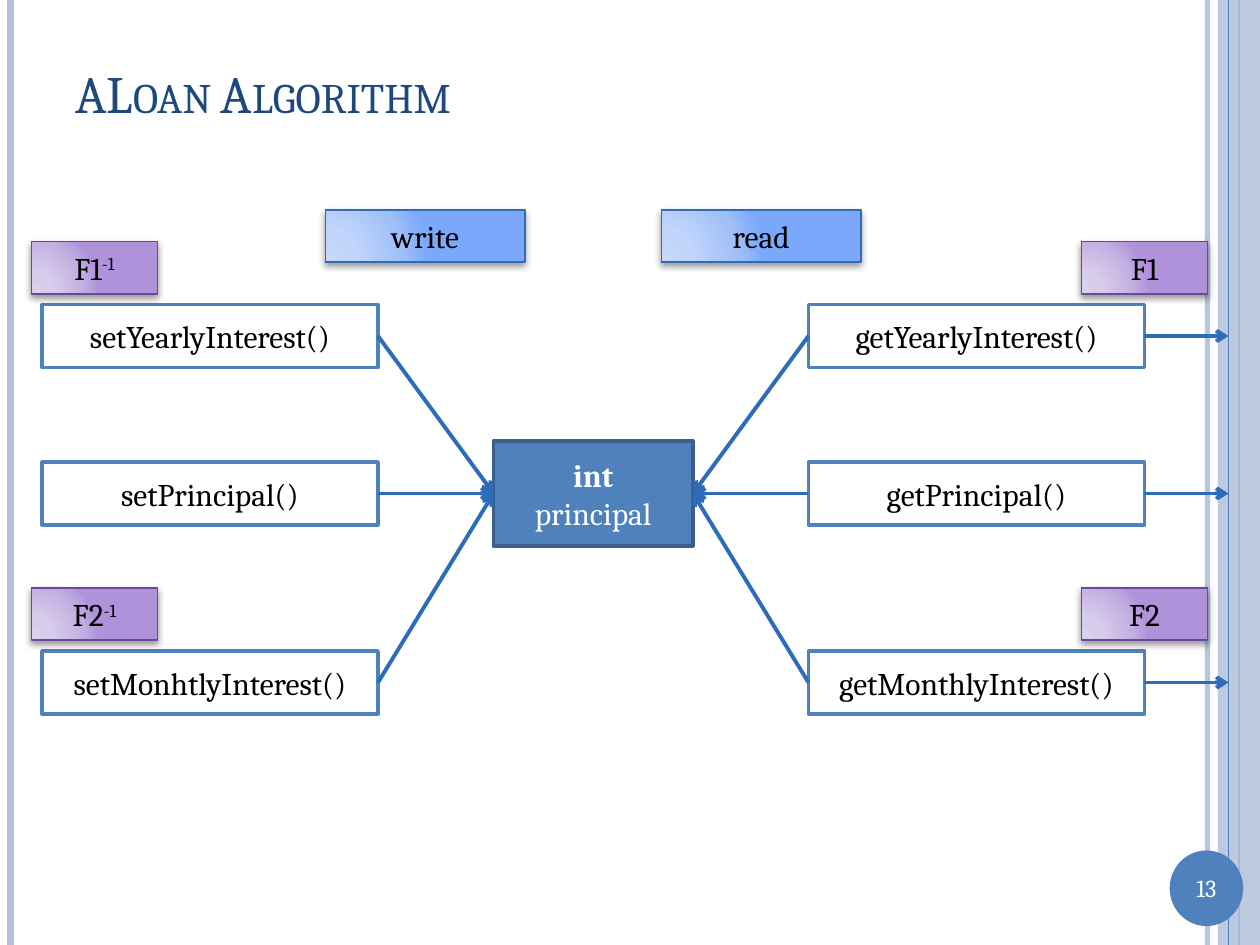
from lxml import etree
from pptx import Presentation
from pptx.dml.color import RGBColor
from pptx.enum.shapes import MSO_CONNECTOR, MSO_SHAPE
from pptx.enum.text import MSO_ANCHOR, PP_ALIGN
from pptx.oxml import parse_xml
from pptx.oxml.ns import qn
from pptx.util import Inches, Pt

RECTANGLE, OVAL = MSO_SHAPE.RECTANGLE, MSO_SHAPE.OVAL
STRAIGHT = MSO_CONNECTOR.STRAIGHT
LEFT, CENTER = PP_ALIGN.LEFT, PP_ALIGN.CENTER
MIDDLE, TOP = MSO_ANCHOR.MIDDLE, MSO_ANCHOR.TOP
LEFT_SITE, RIGHT_SITE = 1, 3

WHITE = RGBColor(0xFF, 0xFF, 0xFF)
BLACK = RGBColor(0x00, 0x00, 0x00)
NAVY = RGBColor(0x1F, 0x49, 0x7D)
BLUE = RGBColor(0x4F, 0x81, 0xBD)
DARK_BLUE = RGBColor(0x3A, 0x5F, 0x8C)
ARROW_BLUE = RGBColor(0x2C, 0x6C, 0xB9)
PALE_BLUE = RGBColor(0xB3, 0xC1, 0xDB)
PURPLE = RGBColor(0x6C, 0x48, 0x98)
STOPS = (0, 30, 75, 100)
BLUE_GRADIENT = [RGBColor.from_string(c) for c in ("C7D8FB", "C1D5FA", "9FBFF9", "7AA9FB")]
PURPLE_GRADIENT = [RGBColor.from_string(c) for c in ("DBD0ED", "D8CCEB", "C3B0E2", "AF92DA")]

DRAWING = 'xmlns:a="http://schemas.openxmlformats.org/drawingml/2006/main"'


class Diagram:
    """Draws on one slide, with lengths in cells of a 120 by 90 grid."""

    font = "Cambria"
    columns, rows = 120, 90

    def __init__(self, presentation):
        self.slide = presentation.slides.add_slide(presentation.slide_layouts[6])
        self.column = presentation.slide_width / self.columns
        self.row = presentation.slide_height / self.rows

    def place(self, left, top, width, height):
        return (round(left * self.column), round(top * self.row),
                round(width * self.column), round(height * self.row))

    def fill_text(self, shape, paragraphs, color, size=18, align=CENTER, anchor=MIDDLE):
        """Each paragraph is a list of (text, font attributes) runs."""
        frame = shape.text_frame
        frame.word_wrap = True
        frame.vertical_anchor = anchor
        for index, runs in enumerate(paragraphs):
            paragraph = frame.add_paragraph() if index else frame.paragraphs[0]
            paragraph.alignment = align
            for text, attributes in runs:
                run = paragraph.add_run()
                run.text = text
                run.font.name, run.font.size = self.font, Pt(size)
                run.font.color.rgb = color
                for name, value in attributes.items():
                    run.font._element.set(name, value)

    def text(self, area, text, color, size, align=CENTER, anchor=TOP, **attributes):
        box = self.slide.shapes.add_textbox(*self.place(*area))
        self.fill_text(box, [[(text, attributes)]], color, size, align, anchor)

    def shape(self, area, fill, line=None, width=2, kind=RECTANGLE, opacity=None):
        shape = self.slide.shapes.add_shape(kind, *self.place(*area))
        shape.shadow.inherit = False
        shape.fill.solid()
        shape.fill.fore_color.rgb = fill
        self.fade(shape, opacity)
        if line is None:
            shape.line.fill.background()
        else:
            shape.line.color.rgb, shape.line.width = line, Pt(width)
        return shape

    def box(self, area, paragraphs, fill=WHITE, line=BLUE, color=BLACK):
        shape = self.shape(area, fill, line)
        self.fill_text(shape, paragraphs, color)
        return shape

    def tag(self, area, runs, gradient, line):
        """A label with a radial gradient and a soft shadow."""
        shape = self.shape(area, gradient[-1], line, 1)
        properties = shape._element.spPr
        stops = "".join(f'<a:gs pos="{stop * 1000}"><a:srgbClr val="{color}"/></a:gs>'
                        for stop, color in zip(STOPS, gradient))
        properties.replace(properties.find(qn("a:solidFill")), parse_xml(
            f'<a:gradFill {DRAWING} rotWithShape="1"><a:gsLst>{stops}</a:gsLst>'
            '<a:path path="circle"><a:fillToRect l="5000" t="100000" r="120000" b="10000"/>'
            '</a:path></a:gradFill>'))
        properties.find(qn("a:effectLst")).append(parse_xml(
            f'<a:outerShdw {DRAWING} blurRad="{Pt(4)}" dist="{Pt(2)}" dir="5400000" '
            'rotWithShape="0"><a:srgbClr val="000000"><a:alpha val="40000"/></a:srgbClr>'
            '</a:outerShdw>'))
        self.fill_text(shape, [runs], BLACK)

    def line(self, start, end, color, width, opacity=None):
        begin, finish = self.place(*start, 0, 0)[:2], self.place(*end, 0, 0)[:2]
        connector = self.slide.shapes.add_connector(STRAIGHT, *begin, *finish)
        connector.line.color.rgb, connector.line.width = color, Pt(width)
        etree.SubElement(connector._element.spPr, qn("a:effectLst"))
        self.fade(connector, opacity)
        return connector

    def arrow(self, start, end):
        connector = self.line(start, end, ARROW_BLUE, 2.25)
        line = connector._element.spPr.find(qn("a:ln"))
        etree.SubElement(line, qn("a:tailEnd"), type="arrow")
        return connector

    def fade(self, shape, opacity):
        if opacity is not None:
            color = next(shape._element.spPr.iter(qn("a:srgbClr")))
            etree.SubElement(color, qn("a:alpha"), val=str(opacity * 1000))

    def rule(self, column, color, width, opacity=None):
        self.line((column, 0), (column, self.rows), color, width, opacity)


def main():
    presentation = Presentation()
    presentation.slide_width, presentation.slide_height = Inches(10), Inches(7.5)
    diagram = Diagram(presentation)

    # Side stripes and page number
    diagram.rule(115, PALE_BLUE, 3, 93)
    diagram.rule(1, PALE_BLUE, 4.5)
    diagram.rule(118, BLUE, 1.5)
    diagram.shape((116, 0, 4, 90), PALE_BLUE, opacity=87)
    diagram.rule(117, BLUE, 0.75)
    diagram.shape((111.4, 81, 7, 7.2), BLUE, kind=OVAL)
    diagram.text((111.4, 82.6, 7, 4.1), "13", WHITE, 14)

    # Title
    diagram.text((6, 3.6, 104, 10.4), "ALoan Algorithm", NAVY, 30, LEFT, MIDDLE, cap="small")

    # Shared variable
    variable_left, variable_top, variable_width, variable_height = 47, 42, 19, 10
    variable_right = variable_left + variable_width
    variable_middle = variable_top + variable_height / 2
    variable = diagram.box((variable_left, variable_top, variable_width, variable_height),
                           [[("int", {"b": "1"})], [("principal", {})]],
                           BLUE, DARK_BLUE, WHITE)

    # Setters and getters around it
    width, height = 32, 6
    setter_left, getter_left, edge = 4, 77, 117
    methods = ((29, "setYearlyInterest()", "getYearlyInterest()"),
               (44, "setPrincipal()", "getPrincipal()"),
               (62, "setMonhtlyInterest()", "getMonthlyInterest()"))
    for top, setter_name, getter_name in methods:
        middle = top + height / 2
        setter = diagram.box((setter_left, top, width, height), [[(setter_name, {})]])
        getter = diagram.box((getter_left, top, width, height), [[(getter_name, {})]])
        for method, start, site, end, target in (
                (setter, setter_left + width, RIGHT_SITE, variable_left, LEFT_SITE),
                (getter, getter_left, LEFT_SITE, variable_right, RIGHT_SITE)):
            arrow = diagram.arrow((start, middle), (end, variable_middle))
            arrow.begin_connect(method, site)
            arrow.end_connect(variable, target)
        output = diagram.arrow((getter_left + width, middle), (edge, middle))
        output.begin_connect(getter, RIGHT_SITE)

    # Access tags
    for left, name in ((31, "write"), (63, "read")):
        diagram.tag((left, 20, 19, 5), [(name, {})], BLUE_GRADIENT, ARROW_BLUE)

    # Conversion functions and their inverses
    for top, name in ((23, "F1"), (56, "F2")):
        function = (name, {})
        inverse = [function, ("-1", {"baseline": "30000"})]
        diagram.tag((103, top, 12, 5), [function], PURPLE_GRADIENT, PURPLE)
        diagram.tag((3, top, 12, 5), inverse, PURPLE_GRADIENT, PURPLE)

    presentation.save("out.pptx")


if __name__ == "__main__":
    main()
